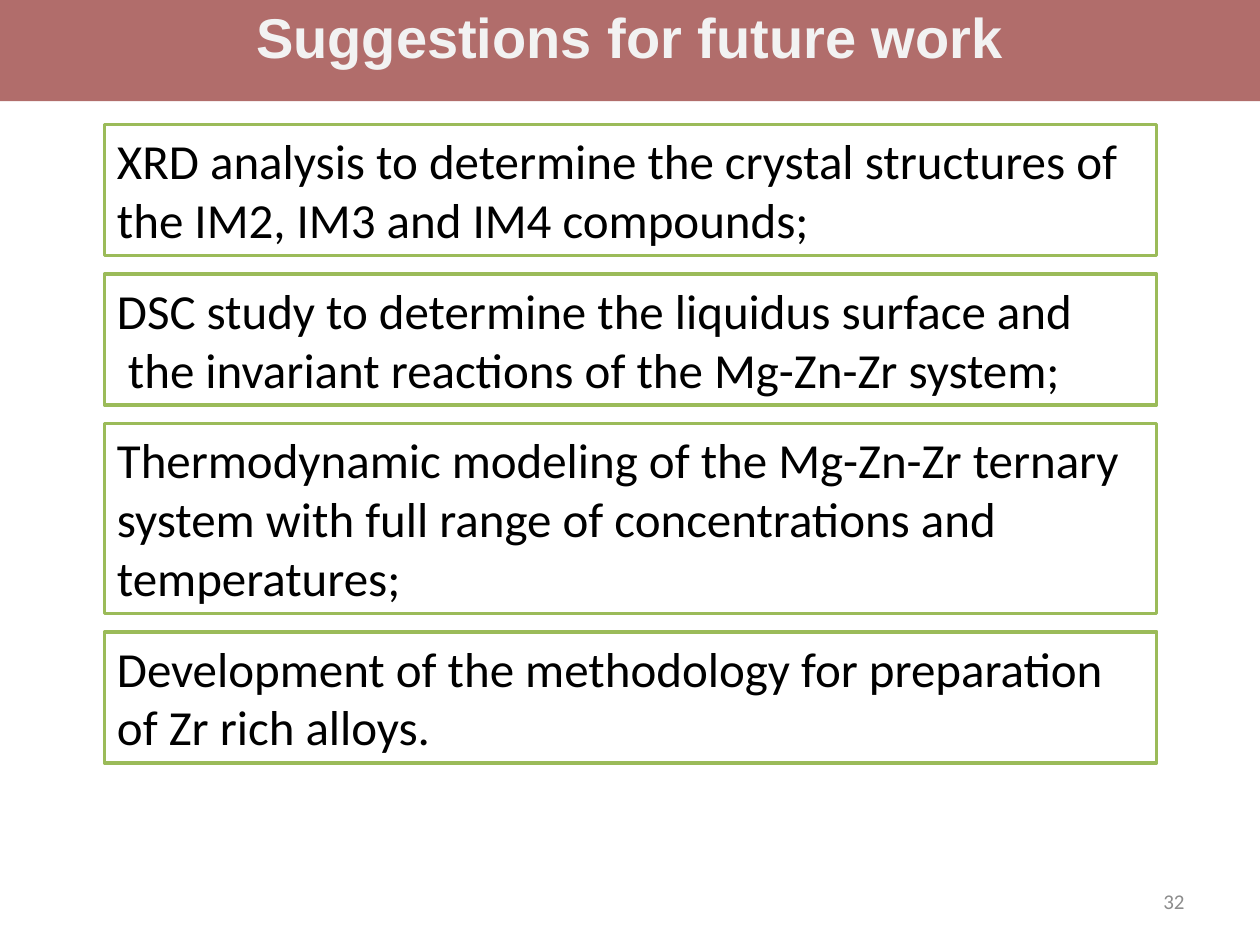
from dataclasses import dataclass

from lxml.etree import SubElement
from pptx import Presentation
from pptx.dml.color import RGBColor as RGB
from pptx.enum.shapes import MSO_SHAPE as SHAPE
from pptx.enum.text import MSO_ANCHOR as ANCHOR, MSO_AUTO_SIZE as AUTO, PP_ALIGN as ALIGN
from pptx.oxml.ns import qn
from pptx.util import Inches, Pt


@dataclass(frozen=True)
class Theme:
    """Colours, fonts and type sizes of the slide."""
    band: str = "953735"
    band_opacity: int = 73
    title: str = "F2F2F2"
    box: str = "FFFFFF"
    border: str = "9BBB59"
    ink: str = "000000"
    muted: str = "8C8C8C"
    title_font: str = "Arial"
    body_font: str = "Calibri"
    title_size: int = 32
    body_size: int = 28
    number_size: int = 12


THEME = Theme()
WIDTH, HEIGHT = 10, 7.5
LEFT, TOP, BOX_WIDTH = 0.83, 0.99, 8.35
LINE, PADDING, GAP = 0.47, 0.1, 0.145

SUGGESTIONS = [
    (2, "XRD analysis to determine the crystal structures of the IM2, IM3 and IM4 compounds;"),
    (2, "DSC study to determine the liquidus surface and\n"
        " the invariant reactions of the Mg-Zn-Zr system;"),
    (3, "Thermodynamic modeling of the Mg-Zn-Zr ternary system with full range of "
        "concentrations and temperatures;"),
    (2, "Development of the methodology for preparation of Zr rich alloys."),
]


def place(sp, left, top, width, height):
    """Set the position and size of a shape in inches."""
    sp.left, sp.top, sp.width, sp.height = map(Inches, (left, top, width, height))


def write(sp, text, font, size, color, align=ALIGN.LEFT, anchor=ANCHOR.TOP, bold=False):
    """Fill a shape with text in one style."""
    tf = sp.text_frame
    tf.text = text
    tf.word_wrap = True
    tf.vertical_anchor = anchor
    for p in tf.paragraphs:
        p.alignment = align
        for r in p.runs:
            r.font.name, r.font.size, r.font.bold = font, Pt(size), bold
            r.font.color.rgb = RGB.from_string(color)


def add_title(s, text):
    """Turn the title placeholder into a translucent band across the top."""
    sp = s.shapes.title
    place(sp, 0, -0.03, WIDTH, 0.64)
    sp.fill.solid()
    sp.fill.fore_color.rgb = RGB.from_string(THEME.band)
    color = sp.element.spPr.find(qn("a:solidFill"))[0]
    SubElement(color, qn("a:alpha"), val=str(THEME.band_opacity * 1000))
    write(sp, text, THEME.title_font, THEME.title_size, THEME.title, ALIGN.CENTER, bold=True)
    sp.text_frame.auto_size = AUTO.SHAPE_TO_FIT_TEXT


def add_box(s, top, height, text):
    """Add an outlined box holding one suggestion."""
    sp = s.shapes.add_shape(SHAPE.RECTANGLE, 0, 0, 0, 0)
    place(sp, LEFT, top, BOX_WIDTH, height)
    sp.shadow.inherit = False
    sp.fill.solid()
    sp.fill.fore_color.rgb = RGB.from_string(THEME.box)
    sp.line.color.rgb = RGB.from_string(THEME.border)
    sp.line.width = Pt(2)
    write(sp, text, THEME.body_font, THEME.body_size, THEME.ink)
    sp.text_frame.auto_size = AUTO.SHAPE_TO_FIT_TEXT


def add_number(s, text):
    """Add the page number at the lower right."""
    sp = s.shapes.add_textbox(0, 0, 0, 0)
    place(sp, 7.17, 6.95, 2.33, 0.4)
    write(sp, text, THEME.body_font, THEME.number_size, THEME.muted, ALIGN.RIGHT, ANCHOR.MIDDLE)


def main():
    """Build the slide and save it."""
    prs = Presentation()
    prs.slide_width, prs.slide_height = Inches(WIDTH), Inches(HEIGHT)
    s = prs.slides.add_slide(prs.slide_layouts[5])
    add_title(s, "Suggestions for future work")
    top = TOP
    for lines, text in SUGGESTIONS:
        height = lines * LINE + PADDING
        add_box(s, top, height, text)
        top += height + GAP
    add_number(s, "32")
    prs.save("out.pptx")


if __name__ == "__main__":
    main()
